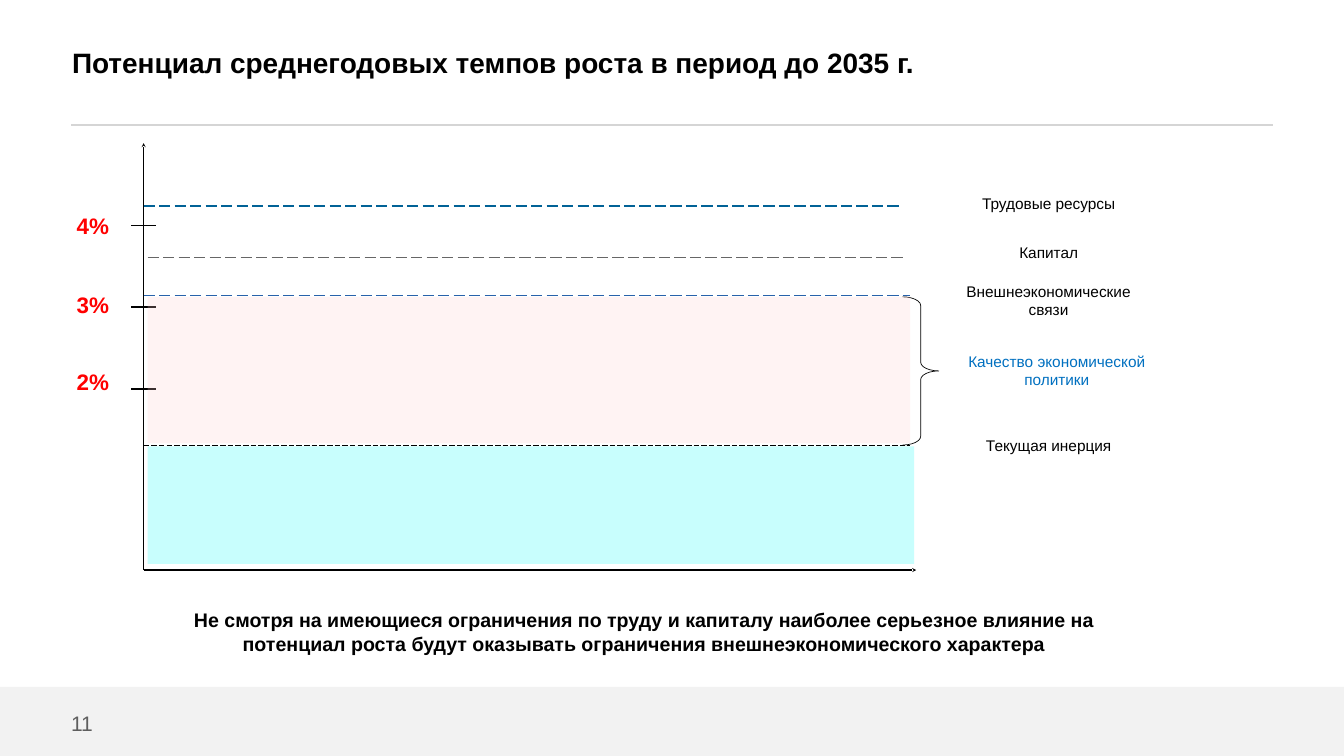
from lxml import etree
from pptx import Presentation
from pptx.dml.color import RGBColor
from pptx.enum.dml import MSO_LINE
from pptx.enum.shapes import MSO_CONNECTOR, MSO_SHAPE
from pptx.enum.text import MSO_ANCHOR, PP_ALIGN
from pptx.oxml.ns import qn
from pptx.util import Cm, Pt

STRAIGHT = MSO_CONNECTOR.STRAIGHT
RECTANGLE, BRACE = MSO_SHAPE.RECTANGLE, MSO_SHAPE.RIGHT_BRACE
LONG_DASH = MSO_LINE.LONG_DASH
MIDDLE = MSO_ANCHOR.MIDDLE
LEFT, CENTER = PP_ALIGN.LEFT, PP_ALIGN.CENTER

BLACK = RGBColor(0x00, 0x00, 0x00)
WHITE = RGBColor(0xFF, 0xFF, 0xFF)
RED = RGBColor(0xFF, 0x00, 0x00)
RULE_GRAY = RGBColor(0xD5, 0xD5, 0xD5)
FOOTER_GRAY = RGBColor(0xF2, 0xF2, 0xF2)
NUMBER_GRAY = RGBColor(0x5E, 0x5E, 0x5E)
CAPITAL_GRAY = RGBColor(0x66, 0x66, 0x66)
LABOUR_BLUE = RGBColor(0x01, 0x62, 0x96)
TRADE_BLUE = RGBColor(0x28, 0x62, 0xAA)
POLICY_BLUE = RGBColor(0x00, 0x70, 0xC0)
CYAN = RGBColor(0xC8, 0xFE, 0xFD)
PINK = RGBColor(0xFF, 0xCC, 0xCC)

# All lengths are in centimetres.
SLIDE_W, SLIDE_H = 67.74, 38.1
MARGIN = 3.58
AXIS_X, AXIS_TOP, AXIS_Y, AXIS_RIGHT = 7.24, 7.21, 28.73, 46.18
TICK_W, TICK_TOP, TICK_STEP = 1.25, 11.35, 4.13
FOOTER_TOP = 34.62
AREA_X = 7.44
POLICY_TOP, INERTIA_Y = 14.96, 22.43

TITLE = "Потенциал среднегодовых темпов роста в период до 2035 г."
CONCLUSION = (
    "Не смотря на имеющиеся ограничения по труду и капиталу наиболее серьезное "
    "влияние на потенциал роста будут оказывать ограничения "
    "внешнеэкономического характера"
)
PAGE_NUMBER = "11"

# growth rate, top of its label
RATES = [("4%", 10.39), ("3%", 14.4), ("2%", 18.26)]

# left, right, height on the scale, colour, width in points
LEVELS = [
    (AXIS_X, 45.87, INERTIA_Y, BLACK, 1),
    (AXIS_X, 45.49, 10.39, LABOUR_BLUE, 2),
    (AREA_X, 45.7, 12.98, CAPITAL_GRAY, 2),
    (AXIS_X, 45.87, 14.88, TRADE_BLUE, 2),
]

# factor, box, colour
FACTORS = [
    ("Трудовые ресурсы", (47.32, 9.78, 11.07, 0.94), BLACK),
    ("Капитал", (47.32, 12.27, 11.07, 0.94), BLACK),
    ("Внешнеэкономические связи", (48.39, 14.2, 8.92, 1.88), BLACK),
    ("Качество экономической политики", (47.73, 17.73, 11.07, 1.88), POLICY_BLUE),
    ("Текущая инерция", (47.32, 21.95, 11.07, 0.94), BLACK),
]


def add_line(slide, start, end, color=BLACK, width=2, dash=None, arrow=False):
    points = [Cm(v) for v in (*start, *end)]
    connector = slide.shapes.add_connector(STRAIGHT, *points)
    connector.line.color.rgb = color
    connector.line.width = Pt(width)
    if dash is not None:
        connector.line.dash_style = dash
    if arrow:
        outline = connector.line._get_or_add_ln()
        etree.SubElement(outline, qn("a:tailEnd"), type="stealth")
    etree.SubElement(connector._element.spPr, qn("a:effectLst"))


def add_form(slide, preset, box, fill=None, line=None, width=2, opacity=None):
    form = slide.shapes.add_shape(preset, *[Cm(v) for v in box])
    form.shadow.inherit = False
    if fill is None:
        form.fill.background()
    else:
        form.fill.solid()
        form.fill.fore_color.rgb = fill
    if opacity is not None:
        color = form._element.spPr.find(qn("a:solidFill"))[0]
        etree.SubElement(color, qn("a:alpha"), val=str(opacity * 1000))
    if line is None:
        form.line.fill.background()
    else:
        form.line.color.rgb = line
        form.line.width = Pt(width)
    return form


def write(holder, text, size, color, bold=False, align=CENTER, inset=0, wrap=True):
    frame = holder.text_frame
    frame.word_wrap = wrap
    frame.vertical_anchor = MIDDLE
    frame.margin_left = frame.margin_right = Cm(inset)
    frame.margin_top = frame.margin_bottom = Cm(inset)
    paragraph = frame.paragraphs[0]
    paragraph.alignment = align
    run = paragraph.add_run()
    run.text = text
    run.font.name = "Arial"
    run.font.size = Pt(size)
    run.font.bold = bold
    run.font.color.rgb = color


def add_text(slide, box, *args, **kwargs):
    write(slide.shapes.add_textbox(*[Cm(v) for v in box]), *args, **kwargs)


def add_frame(slide):
    """Draw the title, rule, footer band and page number."""
    add_line(slide, (MARGIN, 6.3), (64.14, 6.3), RULE_GRAY, 1.5)
    add_form(slide, RECTANGLE, (0, FOOTER_TOP, SLIDE_W, SLIDE_H - FOOTER_TOP),
             FOOTER_GRAY)
    add_text(slide, (MARGIN, 35.81, 1.2, 1.27), PAGE_NUMBER, 30, NUMBER_GRAY,
             align=LEFT, wrap=False)
    add_text(slide, (3.63, 0, 51.16, 6.3), TITLE, 40, BLACK, bold=True, align=LEFT)


def add_scale(slide):
    """Draw both axes and the growth rates with their ticks."""
    origin = (AXIS_X, AXIS_Y)
    add_line(slide, origin, (AXIS_X, AXIS_TOP), arrow=True)
    add_line(slide, origin, (AXIS_RIGHT, AXIS_Y), arrow=True)
    for index, (rate, label_top) in enumerate(RATES):
        y = TICK_TOP + index * TICK_STEP
        add_line(slide, (AXIS_X - TICK_W / 2, y), (AXIS_X + TICK_W / 2, y))
        add_text(slide, (MARGIN, label_top, 2.21, 1.93), rate, 32, RED,
                 bold=True, inset=0.28, wrap=False)


def add_growth_factors(slide):
    for left, right, y, color, width in LEVELS:
        add_line(slide, (left, y), (right, y), color, width, LONG_DASH)
    for factor, box, color in FACTORS:
        write(add_form(slide, RECTANGLE, box, WHITE, WHITE), factor, 22, color)
    brace = add_form(slide, BRACE, (45.49, POLICY_TOP, 1.83, INERTIA_Y - POLICY_TOP),
                     line=BLACK, width=1)
    brace.adjustments[0] = 0.24
    add_form(slide, RECTANGLE, (AREA_X, 22.5, 38.63, 5.92), CYAN)
    add_form(slide, RECTANGLE, (AREA_X, POLICY_TOP, 38.43, 7.37), PINK, opacity=23)


def main():
    deck = Presentation()
    deck.slide_width, deck.slide_height = Cm(SLIDE_W), Cm(SLIDE_H)
    slide = deck.slides.add_slide(deck.slide_layouts[6])
    add_frame(slide)
    add_scale(slide)
    add_growth_factors(slide)
    add_text(slide, (7.21, 30.35, 50.47, 2.97), CONCLUSION, 28, BLACK,
             bold=True, inset=0.28)
    deck.save("out.pptx")


if __name__ == "__main__":
    main()
